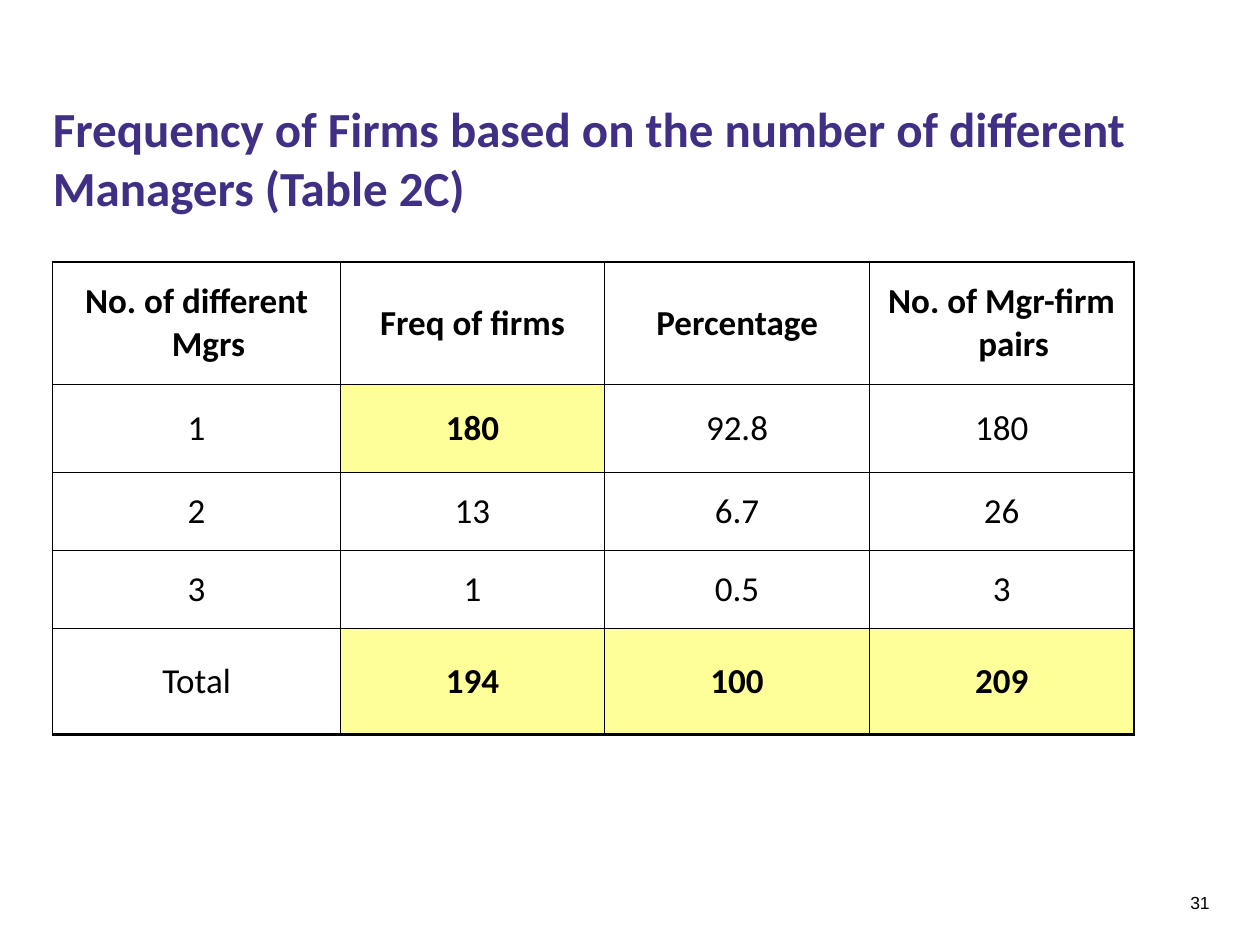
"""Build the slide on the frequency of firms by number of different managers."""
from dataclasses import dataclass

from lxml.etree import SubElement
from pptx import Presentation
from pptx.dml.color import RGBColor
from pptx.enum.text import MSO_ANCHOR, PP_ALIGN
from pptx.oxml.ns import qn
from pptx.util import Inches, Pt


@dataclass(frozen=True)
class Theme:
    ink: str = "000000"
    title: str = "412F86"
    highlight: str = "FFFF99"
    body_font: str = "Calibri"
    number_font: str = "Arial"
    title_size: int = 28
    table_size: int = 20
    number_size: int = 10
    thin: float = 0.75
    medium: float = 1
    thick: float = 2
    hanging: float = 0.19


class SlideBuilder:
    def __init__(self, presentation, theme, columns=100, rows=75):
        self.theme = theme
        self.slide = presentation.slides.add_slide(presentation.slide_layouts[6])
        self.column = presentation.slide_width / columns
        self.row = presentation.slide_height / rows

    def place(self, left, top, width, height):
        return (round(left * self.column), round(top * self.row),
                round(width * self.column), round(height * self.row))

    def style(self, paragraph, name, size, color, bold, alignment):
        paragraph.alignment = alignment
        font = paragraph.font
        font.name, font.size, font.bold = name, Pt(size), bold
        font.color.rgb = RGBColor.from_string(color)

    def text(self, area, words, name, size, color, bold=False, alignment=PP_ALIGN.LEFT):
        frame = self.slide.shapes.add_textbox(*self.place(*area)).text_frame
        frame.word_wrap = True
        frame.vertical_anchor = MSO_ANCHOR.MIDDLE
        frame.margin_left = frame.margin_right = frame.margin_top = frame.margin_bottom = 0
        frame.text = words
        self.style(frame.paragraphs[0], name, size, color, bold, alignment)

    def border(self, cell, side, width):
        line = SubElement(cell._tc.get_or_add_tcPr(), qn(f"a:ln{side}"), w=str(Pt(width)))
        fill = SubElement(line, qn("a:solidFill"))
        SubElement(fill, qn("a:srgbClr"), val=self.theme.ink)

    def cell(self, cell, words, bold, highlighted, top, bottom):
        theme = self.theme
        cell.text = words
        cell.vertical_anchor = MSO_ANCHOR.MIDDLE
        paragraph = cell.text_frame.paragraphs[0]
        properties = paragraph._p.get_or_add_pPr()
        properties.set("marL", str(Inches(theme.hanging)))
        properties.set("indent", str(-Inches(theme.hanging)))
        self.style(paragraph, theme.body_font, theme.table_size, theme.ink, bold, PP_ALIGN.CENTER)
        for side, width in zip("LRTB", (theme.thin, theme.thin, top, bottom)):
            self.border(cell, side, width)
        if highlighted:
            cell.fill.solid()
            cell.fill.fore_color.rgb = RGBColor.from_string(theme.highlight)
        else:
            cell.fill.background()

    def table(self, left, top, widths, heights, records, highlights):
        theme = self.theme
        area = self.place(left, top, sum(widths), sum(heights))
        table = self.slide.shapes.add_table(len(heights), len(widths), *area).table
        table.first_row = table.horz_banding = False
        for column, width in zip(table.columns, widths):
            column.width = round(width * self.column)
        for row, height in zip(table.rows, heights):
            row.height = round(height * self.row)
        inner = [theme.thin] * (len(heights) - 2)
        rules = [theme.medium, theme.medium, *inner, theme.thick]
        for r, record in enumerate(records):
            for c, words in enumerate(record):
                highlighted = (r, c) in highlights
                self.cell(table.cell(r, c), words, r == 0 or highlighted, highlighted,
                          rules[r], rules[r + 1])


def main():
    presentation = Presentation()
    presentation.slide_width, presentation.slide_height = Inches(10), Inches(7.5)
    theme = Theme()
    builder = SlideBuilder(presentation, theme)
    builder.text((4.2, 7.5, 91.4, 10),
                 "Frequency of Firms based on the number of different Managers (Table 2C)",
                 theme.body_font, theme.title_size, theme.title, bold=True)
    records = [
        ("No. of different Mgrs", "Freq of firms", "Percentage", "No. of Mgr-firm pairs"),
        ("1", "180", "92.8", "180"),
        ("2", "13", "6.7", "26"),
        ("3", "1", "0.5", "3"),
        ("Total", "194", "100", "209"),
    ]
    builder.table(4.2, 20.8, [22.8, 21, 21, 21], [9.7, 7, 6.2, 6.2, 8.4], records,
                  highlights={(1, 1), (4, 1), (4, 2), (4, 3)})
    builder.text((92.5, 70.8, 3.5, 1.7), "31", theme.number_font, theme.number_size,
                 theme.ink, alignment=PP_ALIGN.RIGHT)
    presentation.save("out.pptx")


if __name__ == "__main__":
    main()
